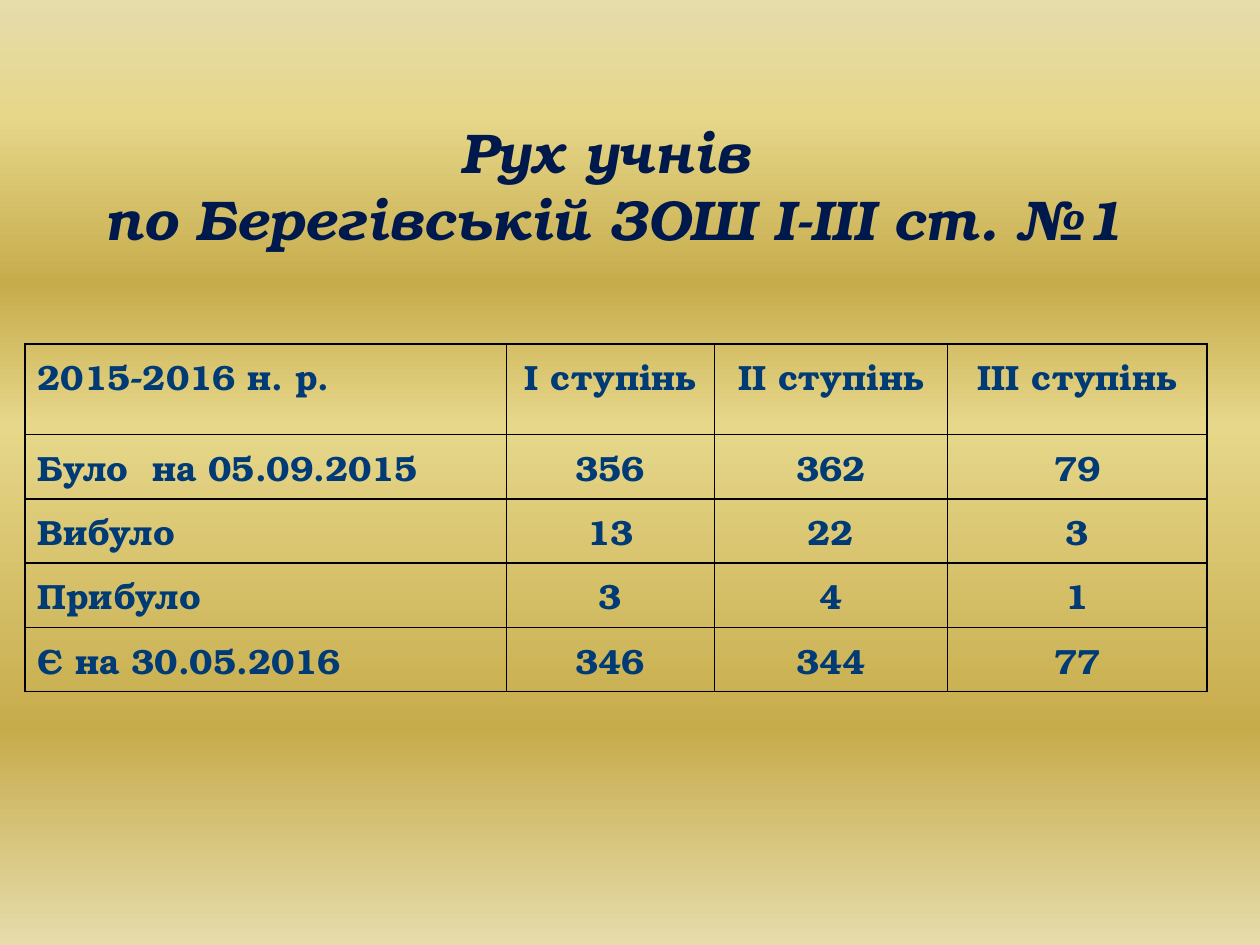
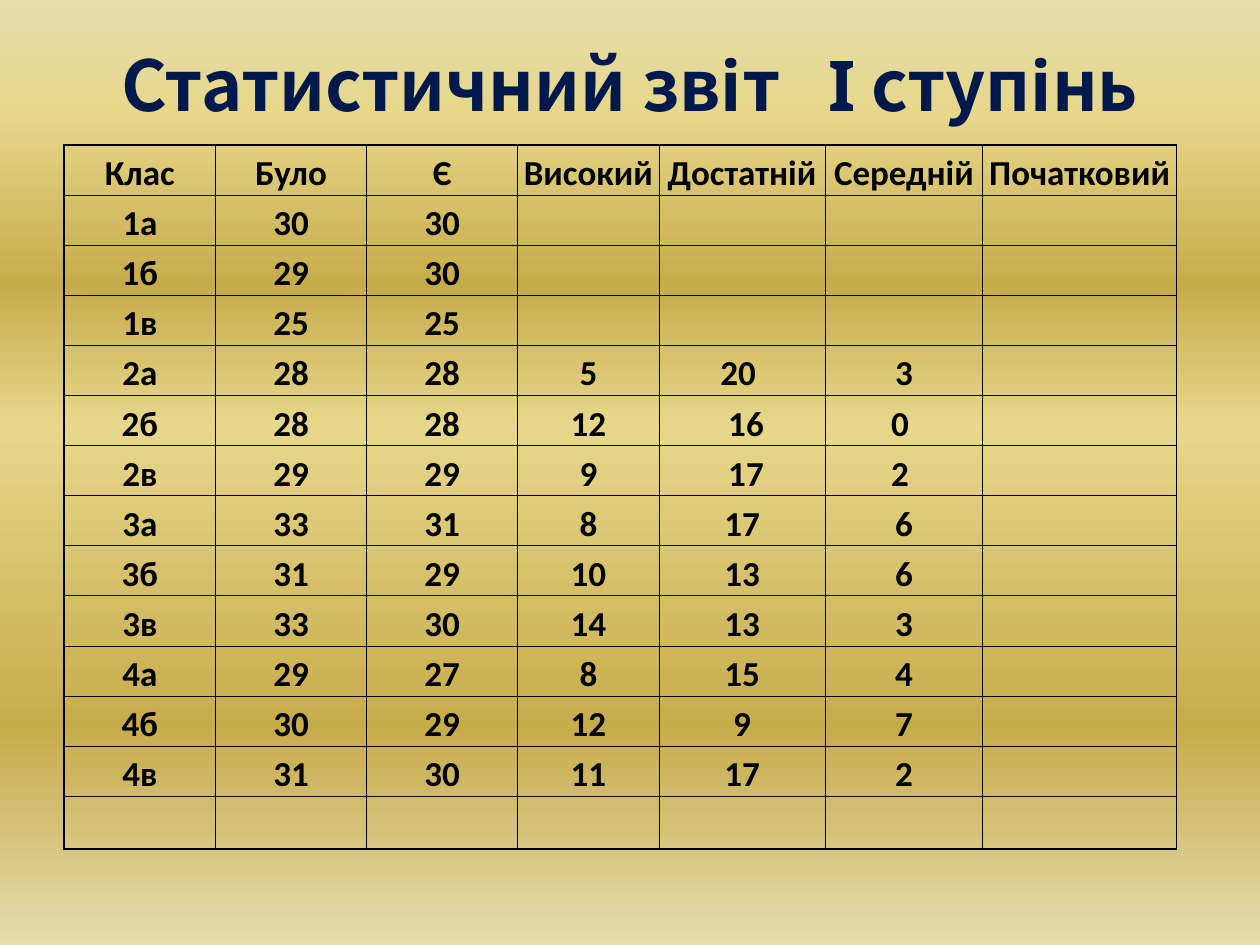
from dataclasses import dataclass

from lxml.etree import SubElement
from pptx import Presentation
from pptx.dml.color import RGBColor
from pptx.enum.text import MSO_ANCHOR, PP_ALIGN
from pptx.oxml.ns import qn
from pptx.util import Inches, Pt


@dataclass(frozen=True)
class Theme:
    navy: str = "00194C"
    blue: str = "003B76"
    black: str = "000000"
    gradient: tuple = ((0, "E6DCAC"), (12, "E6D78A"), (30, "C7AC4C"),
                       (45, "E6D78A"), (77, "C7AC4C"), (100, "E6DCAC"))
    serif: str = "TeX Gyre Bonum"
    title_sans: str = "Noto Sans CJK KR"
    table_sans: str = "Calibri"
    movement_title_size: int = 32
    report_title_size: int = 40
    table_size: int = 20
    thick: float = 1
    thin: float = 0.5


THEME = Theme()

MOVEMENT_ROWS = (
    ("2015-2016 н. р.", "І ступінь", "ІІ ступінь", "ІІІ ступінь"),
    ("Було  на 05.09.2015", "356", "362", "79"),
    ("Вибуло", "13", "22", "3"),
    ("Прибуло", "3", "4", "1"),
    ("Є на 30.05.2016", "346", "344", "77"),
)

REPORT_ROWS = (
    ("Клас", "Було", "Є", "Високий", "Достатній", "Середній", "Початковий"),
    ("1а", "30", "30"),
    ("1б", "29", "30"),
    ("1в", "25", "25"),
    ("2а", "28", "28", "5", "20 ", "3"),
    ("2б", "28", "28", "12", " 16", "0 "),
    ("2в", "29", "29", "9", " 17", "2 "),
    ("3а", "33", "31", "8", "17", "6"),
    ("3б", "31", "29", "10", "13", "6"),
    ("3в", "33", "30", "14", "13", "3"),
    ("4а", "29", "27", "8", "15", "4"),
    ("4б", "30", "29", "12", "9", "7"),
    ("4в", "31", "30", "11", "17", "2"),
    (),
)


def set_attributes(target, values):
    for name, value in values.items():
        setattr(target, name, value)


def style_font(font, color, **values):
    set_attributes(font, {"bold": True, **values})
    font.color.rgb = RGBColor.from_string(color)


def add_gold_slide(presentation):
    """Add a blank slide with the shared gold gradient."""
    slide = presentation.slides.add_slide(presentation.slide_layouts[6])
    fill = slide.background.fill
    fill.gradient()
    fill.gradient_angle = 270
    stops = next(slide.element.iter(qn("a:gsLst")))
    for stop in list(stops):
        stops.remove(stop)
    for percent, color in THEME.gradient:
        stop = SubElement(stops, qn("a:gs"), pos=str(percent * 1000))
        SubElement(stop, qn("a:srgbClr"), val=color)
    return slide


def add_title(slide, box, text, **font_values):
    shape = slide.shapes.add_textbox(*map(Inches, box))
    frame = shape.text_frame
    set_attributes(frame, {"word_wrap": True,
                           "vertical_anchor": MSO_ANCHOR.MIDDLE})
    paragraph = frame.paragraphs[0]
    paragraph.text = text
    paragraph.alignment = PP_ALIGN.CENTER
    for run in paragraph.runs:
        style_font(run.font, THEME.navy, **font_values)


def set_borders(cell, widths):
    properties = cell._tc.get_or_add_tcPr()
    for side, width in widths.items():
        line = SubElement(properties, qn(f"a:ln{side}"), w=str(Pt(width)))
        fill = SubElement(line, qn("a:solidFill"))
        SubElement(fill, qn("a:srgbClr"), val=THEME.black)


def add_grid(slide, box, rows, column_widths, row_heights, inner_width):
    """Add an unfilled table with a thick frame; return its cells by place."""
    row_count, column_count = len(row_heights), len(column_widths)
    table = slide.shapes.add_table(row_count, column_count,
                                   *map(Inches, box)).table
    set_attributes(table, {"first_row": False, "horz_banding": False})
    for column, width in zip(table.columns, column_widths):
        column.width = Inches(width)
    for row, height in zip(table.rows, row_heights):
        row.height = Inches(height)

    cells = {}
    for i in range(row_count):
        for j in range(column_count):
            cell = cells[i, j] = table.cell(i, j)
            outer = {"L": j == 0, "R": j == column_count - 1,
                     "T": i == 0, "B": i == row_count - 1}
            set_borders(cell, {side: THEME.thick if edge else inner_width
                               for side, edge in outer.items()})
            cell.fill.background()
            if j < len(rows[i]):
                cell.text = rows[i][j]
    return cells


def style_cell(cell, color, font_name, alignment):
    paragraph = cell.text_frame.paragraphs[0]
    paragraph.alignment = alignment
    for run in paragraph.runs:
        style_font(run.font, color, name=font_name, size=Pt(THEME.table_size))
    return paragraph


def add_movement_table(slide, box):
    cells = add_grid(slide, box, MOVEMENT_ROWS, (3.82, 1.65, 1.85, 2.06),
                     [0.72] + [0.51] * 4, THEME.thick)
    for (_, column), cell in cells.items():
        alignment = PP_ALIGN.CENTER if column else PP_ALIGN.LEFT
        paragraph = style_cell(cell, THEME.blue, THEME.serif, alignment)
        paragraph.space_before = Pt(5)
        # Hanging indent
        properties = paragraph._p.get_or_add_pPr()
        properties.set("marL", str(Inches(0.38)))
        properties.set("indent", str(Inches(-0.38)))


def add_report_table(slide, box):
    last_height = 0.42
    body_count = len(REPORT_ROWS) - 1
    body_height = (box[3] - last_height) / body_count
    cells = add_grid(slide, box, REPORT_ROWS,
                     (1.2, 1.2, 1.2, 1.12, 1.32, 1.25, 1.54),
                     [body_height] * body_count + [last_height], THEME.thin)
    inset = Inches(0.01)
    for cell in cells.values():
        set_attributes(cell, {"margin_left": inset, "margin_right": inset,
                              "margin_top": inset, "margin_bottom": 0,
                              "vertical_anchor": MSO_ANCHOR.BOTTOM})
        style_cell(cell, THEME.black, THEME.table_sans, PP_ALIGN.CENTER)


def build_movement_slide(presentation):
    slide = add_gold_slide(presentation)
    add_title(slide, (0, 0.52, 9.76, 1.89),
              "Рух учнів \vпо Берегівській ЗОШ І-ІІІ ст. №1",
              name=THEME.serif, size=Pt(THEME.movement_title_size), italic=True)
    add_movement_table(slide, (0.2, 2.73, 9.38, 2.76))


def build_report_slide(presentation):
    slide = add_gold_slide(presentation)
    add_title(slide, (0, 0.25, 10, 0.83), "Статистичний звіт   І ступінь",
              name=THEME.title_sans, size=Pt(THEME.report_title_size))
    add_report_table(slide, (0.51, 1.15, 8.83, 5.59))


def main():
    presentation = Presentation()
    set_attributes(presentation, {"slide_width": Inches(10),
                                  "slide_height": Inches(7.5)})
    build_movement_slide(presentation)
    build_report_slide(presentation)
    presentation.save("out.pptx")


if __name__ == "__main__":
    main()
